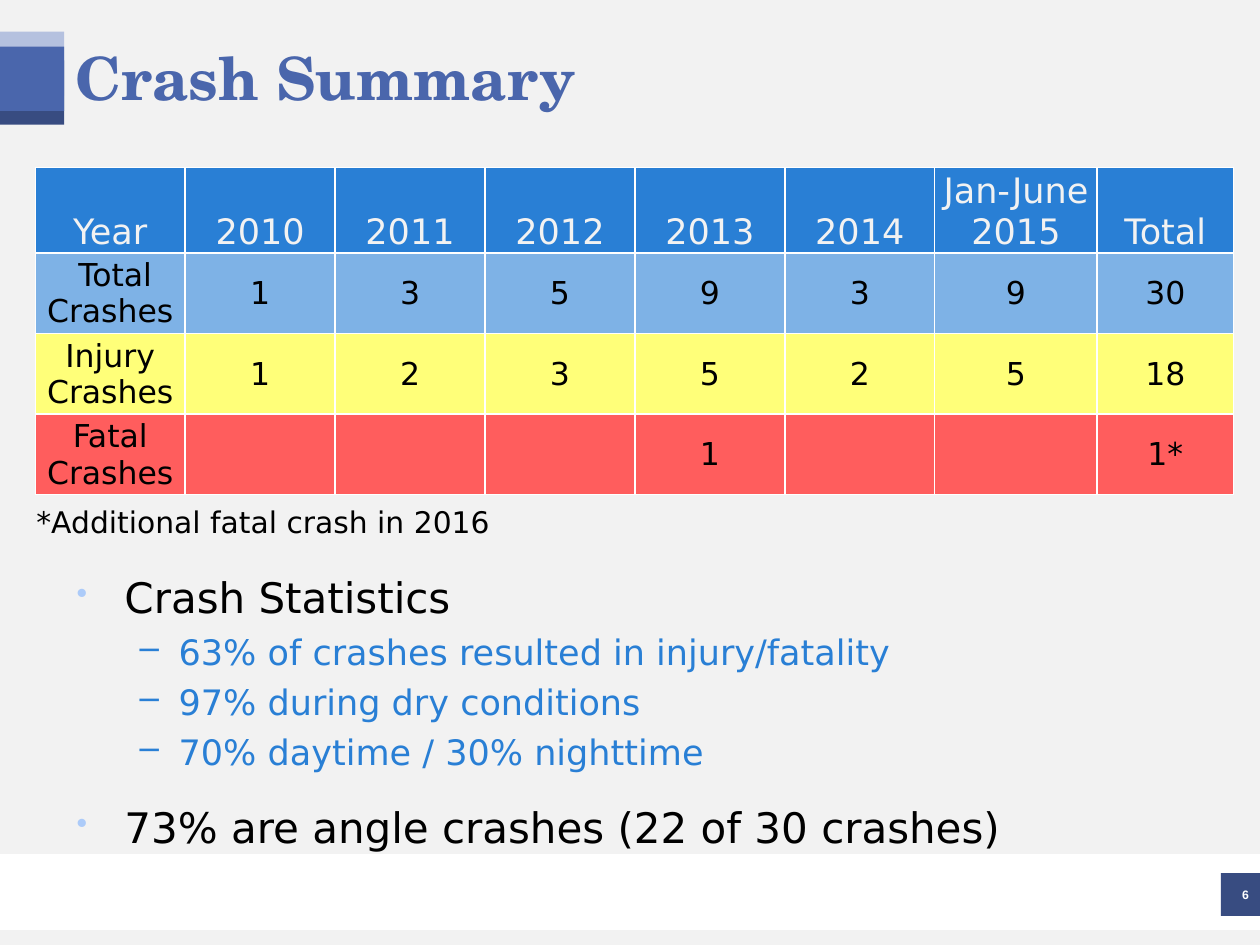
"""Build the crash summary slide."""
import dataclasses
import typing

import lxml.etree
import pptx
import pptx.dml.color
import pptx.enum.shapes
import pptx.enum.text
import pptx.oxml.ns
import pptx.util

Inches = pptx.util.Inches
Pt = pptx.util.Pt
ALIGN = pptx.enum.text.PP_ALIGN
ANCHOR = pptx.enum.text.MSO_ANCHOR

HUES = {
    "page": "F2F2F2", "white": "FFFFFF", "black": "000000", "navy": "384C81",
    "pale": "B5C1DF", "slate": "4A66AC", "dot": "ACCBF9", "blue": "297FD5",
    "sky": "7EB2E6", "yellow": "FFFF79", "red": "FF5D5D",
}
SANS = "DejaVu Sans"


@dataclasses.dataclass
class Block:
    left: float
    top: float
    width: float
    height: float
    hue: str


@dataclasses.dataclass
class Band:
    cells: list[str]
    hue: str
    height: float = 0.64
    size: int = 18
    ink: str = "black"
    anchor: typing.Any = ANCHOR.MIDDLE


@dataclasses.dataclass
class Point:
    text: str
    level: int = 0
    before: float = 4.6
    after: float = 0


BLOCKS = [
    Block(0, 6.78, 10, 0.6, "white"),
    Block(0, 0.48, 0.51, 0.51, "navy"),
    Block(0, 0.25, 0.51, 0.51, "pale"),
    Block(0, 0.37, 0.51, 0.51, "slate"),
]
BANDS = [
    Band(["Year", "2010", "2011", "2012", "2013", "2014", "Jan-June 2015", "Total"],
         "blue", 0.67, 20, "page", ANCHOR.BOTTOM),
    Band([" Total Crashes", "1", "3", "5", "9", "3", "9", "30"], "sky"),
    Band(["Injury Crashes", "1", "2", "3", "5", "2", "5", "18"], "yellow"),
    Band(["Fatal Crashes", "", "", "", "1", "", "", "1*"], "red"),
]
WIDTHS = [1.19] * 6 + [1.29, 1.08]
POINTS = [
    Point("Crash Statistics", before=0),
    Point("63% of crashes resulted in injury/fatality", 1),
    Point("97% during dry conditions", 1),
    Point("70% daytime / 30% nighttime", 1, after=12),
    Point("73% are angle crashes (22 of 30 crashes)"),
]


def shade(name: str) -> pptx.dml.color.RGBColor:
    """Return a named colour."""
    return pptx.dml.color.RGBColor.from_string(HUES[name])


def node(root: typing.Any, tag: str, **attrs: str) -> typing.Any:
    """Append a drawing element."""
    return lxml.etree.SubElement(root, pptx.oxml.ns.qn(f"a:{tag}"), attrs)


def write(para: typing.Any, text: str, *, size: float, ink: str = "black",
          font: str = SANS, bold: bool = False, align: typing.Any = ALIGN.LEFT) -> None:
    """Put formatted text in a paragraph."""
    para.alignment = align
    run = para.add_run()
    run.text = text
    run.font.size = Pt(size)
    run.font.name = font
    run.font.bold = bold
    run.font.color.rgb = shade(ink)


def add_block(slide: typing.Any, block: Block) -> typing.Any:
    """Draw a plain filled rectangle."""
    shape = slide.shapes.add_shape(
        pptx.enum.shapes.MSO_SHAPE.RECTANGLE, Inches(block.left), Inches(block.top),
        Inches(block.width), Inches(block.height))
    shape.shadow.inherit = False
    shape.fill.solid()
    shape.fill.fore_color.rgb = shade(block.hue)
    shape.line.fill.background()
    return shape


def add_box(slide: typing.Any, left: float, top: float, width: float, height: float,
            anchor: typing.Any = ANCHOR.TOP) -> typing.Any:
    """Add a wrapping text box and return its frame."""
    box = slide.shapes.add_textbox(
        Inches(left), Inches(top), Inches(width), Inches(height))
    frame = box.text_frame
    frame.word_wrap = True
    frame.vertical_anchor = anchor
    return frame


def add_edge(cell: typing.Any) -> None:
    """Give a cell thin white borders."""
    props = cell._tc.get_or_add_tcPr()
    for place, side in enumerate(("lnL", "lnR", "lnT", "lnB")):
        line = node(props, side, w=str(Pt(1)))
        node(node(line, "solidFill"), "srgbClr", val=HUES["white"])
        props.insert(place, line)


def add_grid(slide: typing.Any) -> None:
    """Draw the crash table."""
    table = slide.shapes.add_table(
        len(BANDS), len(WIDTHS), Inches(0.28), Inches(1.33), Inches(sum(WIDTHS)),
        Inches(sum(band.height for band in BANDS))).table
    table.first_row = table.horz_banding = False
    for col, width in zip(table.columns, WIDTHS):
        col.width = Inches(width)
    for row, band in zip(table.rows, BANDS):
        row.height = Inches(band.height)
        for cell, text in zip(row.cells, band.cells):
            cell.margin_left = cell.margin_right = cell.margin_top = Inches(0.01)
            cell.margin_bottom = 0
            cell.vertical_anchor = band.anchor
            cell.fill.solid()
            cell.fill.fore_color.rgb = shade(band.hue)
            add_edge(cell)
            if text:
                write(cell.text_frame.paragraphs[0], text, size=band.size,
                      ink=band.ink, align=ALIGN.CENTER)


def add_points(frame: typing.Any) -> None:
    """Write the bullet list."""
    for place, point in enumerate(POINTS):
        para = frame.add_paragraph() if place else frame.paragraphs[0]
        para.level = point.level
        props = para._p.get_or_add_pPr()
        left, hang = (0.81, 0.31) if point.level else (0.38, 0.38)
        props.set("marL", str(Inches(left)))
        props.set("indent", str(-Inches(hang)))
        if not point.level:
            node(node(props, "buClr"), "srgbClr", val=HUES["dot"])
            node(props, "buSzPct", val="75000")
        node(props, "buChar", char="–" if point.level else "•")
        para.space_before = Pt(point.before)
        para.space_after = Pt(point.after)
        write(para, point.text, size=20 if point.level else 24,
              ink="blue" if point.level else "black")


def main() -> None:
    """Build and save the slide."""
    deck = pptx.Presentation()
    deck.slide_width, deck.slide_height = Inches(10), Inches(7.5)
    slide = deck.slides.add_slide(deck.slide_layouts[6])
    slide.background.fill.solid()
    slide.background.fill.fore_color.rgb = shade("page")
    for block in BLOCKS:
        add_block(slide, block)
    title = add_box(slide, 0.5, 0, 9, 1.22, ANCHOR.MIDDLE)
    write(title.paragraphs[0], "Crash Summary", size=34, ink="slate",
          font="TeX Gyre Schola", bold=True)
    add_points(add_box(slide, 0.51, 4.49, 9.03, 2.47))
    note = add_box(slide, 0.19, 3.95, 5.89, 0.39)
    write(note.paragraphs[0], "*Additional fatal crash in 2016", size=17)
    add_grid(slide)
    badge = add_block(slide, Block(9.69, 6.93, 0.32, 0.34, "navy")).text_frame
    badge.vertical_anchor = ANCHOR.MIDDLE
    write(badge.paragraphs[0], "6", size=7, ink="white", font="Arial",
          bold=True, align=ALIGN.RIGHT)
    deck.save("out.pptx")


if __name__ == "__main__":
    main()
